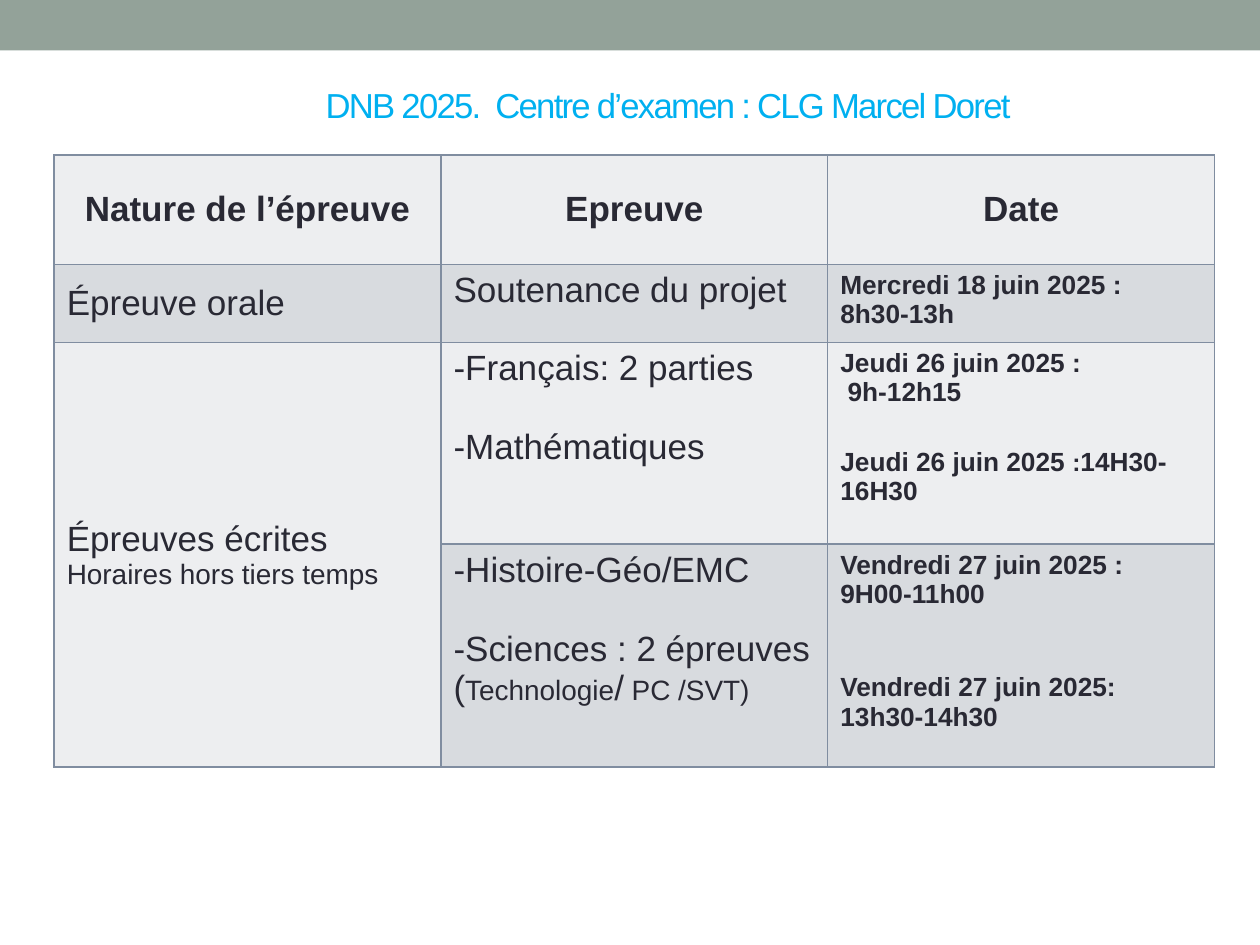
from dataclasses import dataclass

from lxml.etree import SubElement
from pptx import Presentation
from pptx.dml.color import RGBColor
from pptx.enum.shapes import MSO_SHAPE as Shape
from pptx.enum.text import MSO_ANCHOR as Anchor, MSO_AUTO_SIZE as AutoSize, PP_ALIGN as Align
from pptx.oxml.ns import qn
from pptx.util import Inches, Pt


@dataclass(frozen=True)
class Theme:
    font: str = "Arial"
    band: str = "93A299"
    title: str = "00B0F0"
    ink: str = "292934"
    border: str = "808DA0"
    light: str = "EDEEF0"
    dark: str = "D8DBDF"
    title_size: float = 19.8
    large: float = 20
    small: float = 16
    date: float = 15
    colon: float = 14


THEME = Theme()
SLIDE_WIDTH, SLIDE_HEIGHT = 10, 7.5
TABLE_LEFT, TABLE_TOP, COLUMN_WIDTH = 0.43, 1.23, 3.07
ROW_HEIGHTS = [0.87, 0.62, 1.6, 1.77]
LINE = 1.15  # line height as a share of the type size
GAP = LINE * THEME.large
WIDE_GAP = 2 * LINE * THEME.small

TITLE = "DNB 2025.  Centre d’examen : CLG Marcel Doret"
HEADERS = ["Nature de l’épreuve", "Epreuve", "Date"]

# A cell is a list of paragraphs: (space before, (text, size), (text, size), ...)
LARGE, SMALL, DATE = THEME.large, THEME.small, THEME.date
ROWS = [
    [
        [(0, ("Épreuve orale", LARGE))],
        [(0, ("Soutenance du projet", LARGE))],
        [(0, ("Mercredi 18 juin 2025 :", DATE)), (0, ("8h30-13h", DATE))],
    ],
    [
        [(0, ("Épreuves écrites", LARGE)), (0, ("Horaires hors tiers temps", SMALL))],
        [(0, ("-Français: 2 parties", LARGE)), (GAP, ("-Mathématiques", LARGE))],
        [
            (0, ("Jeudi 26 juin 2025 :", DATE)),
            (0, (" 9h-12h15", DATE)),
            (GAP, ("Jeudi 26 juin 2025 ", DATE), (":", THEME.colon), ("14H30-16H30", DATE)),
        ],
    ],
    [
        [],
        [
            (0, ("-Histoire-Géo/EMC", LARGE)),
            (GAP, ("-Sciences : 2 épreuves", LARGE)),
            (0, ("(", LARGE), ("Technologie", SMALL), ("/", LARGE), (" PC /SVT)", SMALL)),
        ],
        [
            (0, ("Vendredi 27 juin 2025 : 9H00-11h00", DATE)),
            (WIDE_GAP, ("Vendredi 27 juin 2025: 13h30-14h30", DATE)),
        ],
    ],
]


def rgb(color):
    return RGBColor.from_string(color)


def add_span(para, text, size, color=THEME.ink, bold=False):
    span = para.add_run()
    span.text = text
    span.font.name = THEME.font
    span.font.size = Pt(size)
    span.font.bold = bold
    span.font.color.rgb = rgb(color)
    return span


def set_borders(cell, color=THEME.border, width=1):
    properties = cell._tc.get_or_add_tcPr()
    for index, side in enumerate(("lnL", "lnR", "lnT", "lnB")):
        line = SubElement(properties, qn(f"a:{side}"), w=str(Pt(width)))
        fill = SubElement(line, qn("a:solidFill"))
        SubElement(fill, qn("a:srgbClr"), val=color)
        properties.insert(index, line)  # borders come before the cell fill


def fill_cell(cell, paragraphs, fill, anchor=Anchor.TOP, align=Align.LEFT, bold=False):
    cell.fill.solid()
    cell.fill.fore_color.rgb = rgb(fill)
    cell.vertical_anchor = anchor
    set_borders(cell)
    frame = cell.text_frame
    for index, (gap, *spans) in enumerate(paragraphs):
        para = frame.add_paragraph() if index else frame.paragraphs[0]
        para.alignment = align
        para.space_before = Pt(gap)
        for text, size in spans:
            add_span(para, text, size, bold=bold)


def add_band(page):
    band = page.shapes.add_shape(Shape.RECTANGLE, 0, 0, Inches(SLIDE_WIDTH), Inches(0.4))
    band.shadow.inherit = False
    band.fill.solid()
    band.fill.fore_color.rgb = rgb(THEME.band)
    band.line.fill.background()


def set_title(page):
    title = page.shapes.title
    title.left, title.top, title.width, title.height = map(Inches, (0.59, 0.36, 8.86, 0.74))
    frame = title.text_frame
    frame.auto_size = AutoSize.NONE
    frame.word_wrap = True
    frame.vertical_anchor = Anchor.MIDDLE
    frame.margin_left, frame.margin_top = Inches(0.66), Inches(0.25)
    para = frame.paragraphs[0]
    para.alignment = Align.CENTER
    span = add_span(para, TITLE, THEME.title_size, color=THEME.title)
    span.font._element.set("spc", "-100")


def add_schedule(page):
    size = COLUMN_WIDTH * len(HEADERS), sum(ROW_HEIGHTS)
    table = page.shapes.add_table(
        len(ROW_HEIGHTS), len(HEADERS), *map(Inches, (TABLE_LEFT, TABLE_TOP, *size))
    ).table
    table.first_row = table.horz_banding = False
    for column in table.columns:
        column.width = Inches(COLUMN_WIDTH)
    for row, height in zip(table.rows, ROW_HEIGHTS):
        row.height = Inches(height)

    for column, text in enumerate(HEADERS):
        fill_cell(table.cell(0, column), [(0, (text, LARGE))], THEME.light,
                  anchor=Anchor.MIDDLE, align=Align.CENTER, bold=True)
    for row, cells in enumerate(ROWS, start=1):
        for column, paragraphs in enumerate(cells):
            fill_cell(table.cell(row, column), paragraphs,
                      THEME.dark if row % 2 else THEME.light,
                      anchor=Anchor.TOP if column else Anchor.MIDDLE,
                      bold=column == 2)
    table.cell(2, 0).merge(table.cell(3, 0))


def main():
    deck = Presentation()
    deck.slide_width, deck.slide_height = Inches(SLIDE_WIDTH), Inches(SLIDE_HEIGHT)
    page = deck.slides.add_slide(deck.slide_layouts.get_by_name("Title Only"))
    add_band(page)
    set_title(page)
    add_schedule(page)
    deck.save("out.pptx")


if __name__ == "__main__":
    main()
